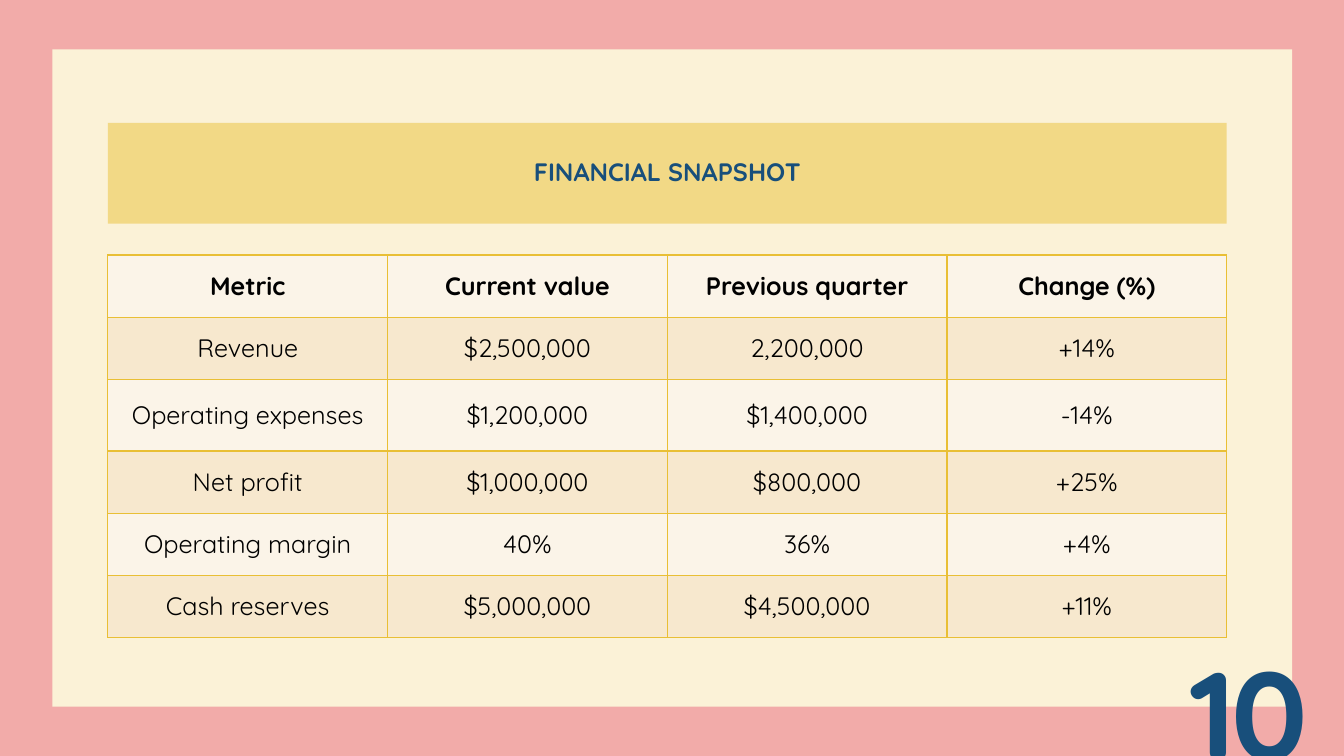
from dataclasses import dataclass

from lxml import etree
from pptx import Presentation
from pptx.dml.color import RGBColor
from pptx.enum import shapes, text
from pptx.oxml import ns
from pptx.util import Pt

# Content
TITLE = "FINANCIAL SNAPSHOT"
PAGE_NUMBER = "10"
ROWS = [
    ("Metric", "Current value", "Previous quarter", "Change (%)"),
    ("Revenue", "$2,500,000", "2,200,000", "+14%"),
    ("Operating expenses", "$1,200,000", "$1,400,000", "-14%"),
    ("Net profit", "$1,000,000", "$800,000", "+25%"),
    ("Operating margin", "40%", "36%", "+4%"),
    ("Cash reserves", "$5,000,000", "$4,500,000", "+11%"),
]


@dataclass(frozen=True)
class Theme:
    font: str = "Quicksand"
    body_size: float = 18
    number_size: float = 89
    background: str = "F2ABA9"
    panel: str = "FBF2D7"
    banner: str = "F2D986"
    accent: str = "184F7B"
    ink: str = "000000"
    bands: tuple = ("FBF4E8", "F7E8CE")
    border: str = "E9BF35"


THEME = Theme()

# Layout in points: left, top, width, height
PANEL = (37.44, 35.28, 885.6, 469.44)
BANNER = (77.04, 87.84, 799.2, 72)
NUMBER = (797.04, 462.96, 137.52, 97.2)
TABLE_TOP = 182.16
ROW_HEIGHTS = [44.4, 44.4, 51.2, 44.4, 44.4, 44.4]
COLUMN_WIDTH = BANNER[2] / len(ROWS[0])


def paint(fill, colour):
    fill.solid()
    fill.fore_color.rgb = RGBColor.from_string(colour)


def add_rectangle(page, place, colour):
    box = page.shapes.add_shape(shapes.MSO_SHAPE.RECTANGLE, *map(Pt, place))
    box.shadow.inherit = False
    paint(box.fill, colour)
    box.line.fill.background()
    return box


def write(frame, words, size, colour, bold, align=text.PP_ALIGN.CENTER):
    para = frame.paragraphs[0]
    para.text = words
    para.alignment = align
    para.font.name = THEME.font
    para.font.size = Pt(size)
    para.font.bold = bold
    para.font.color.rgb = RGBColor.from_string(colour)
    return para


def set_insets(frame, sides):
    frame.margin_left = frame.margin_right = Pt(sides)
    frame.margin_top = frame.margin_bottom = 0
    frame.word_wrap = True


def add_borders(cell):
    properties = cell._tc.get_or_add_tcPr()
    for index, side in enumerate(("lnL", "lnR", "lnT", "lnB")):
        line = etree.Element(ns.qn(f"a:{side}"), w=str(Pt(1)))
        fill = etree.SubElement(line, ns.qn("a:solidFill"))
        etree.SubElement(fill, ns.qn("a:srgbClr"), val=THEME.border)
        properties.insert(index, line)


deck = Presentation()
deck.slide_width, deck.slide_height = Pt(960), Pt(540)
page = deck.slides.add_slide(deck.slide_layouts[6])
paint(page.background.fill, THEME.background)

# Panel and title banner
add_rectangle(page, PANEL, THEME.panel)
banner = add_rectangle(page, BANNER, THEME.banner)
set_insets(banner.text_frame, 7.2)
banner.text_frame.vertical_anchor = text.MSO_ANCHOR.MIDDLE
para = write(banner.text_frame, TITLE, THEME.body_size, THEME.accent, True)
para.line_spacing = 0.9

# Financial table
table = page.shapes.add_table(
    len(ROWS), len(ROWS[0]),
    Pt(BANNER[0]), Pt(TABLE_TOP), Pt(BANNER[2]), Pt(sum(ROW_HEIGHTS)),
).table
for column in table.columns:
    column.width = Pt(COLUMN_WIDTH)
for r, (values, height) in enumerate(zip(ROWS, ROW_HEIGHTS)):
    table.rows[r].height = Pt(height)
    for c, value in enumerate(values):
        cell = table.cell(r, c)
        paint(cell.fill, THEME.bands[r % 2])
        cell.vertical_anchor = text.MSO_ANCHOR.MIDDLE
        write(cell.text_frame, value, THEME.body_size, THEME.ink, r == 0)
        add_borders(cell)

# Page number
number = page.shapes.add_textbox(*map(Pt, NUMBER)).text_frame
set_insets(number, 0)
number.vertical_anchor = text.MSO_ANCHOR.BOTTOM
para = write(number, PAGE_NUMBER, THEME.number_size, THEME.accent, True,
             text.PP_ALIGN.RIGHT)
para.line_spacing = 0.8
para.runs[0]._r.get_or_add_rPr().set("spc", "-300")

deck.save("out.pptx")
